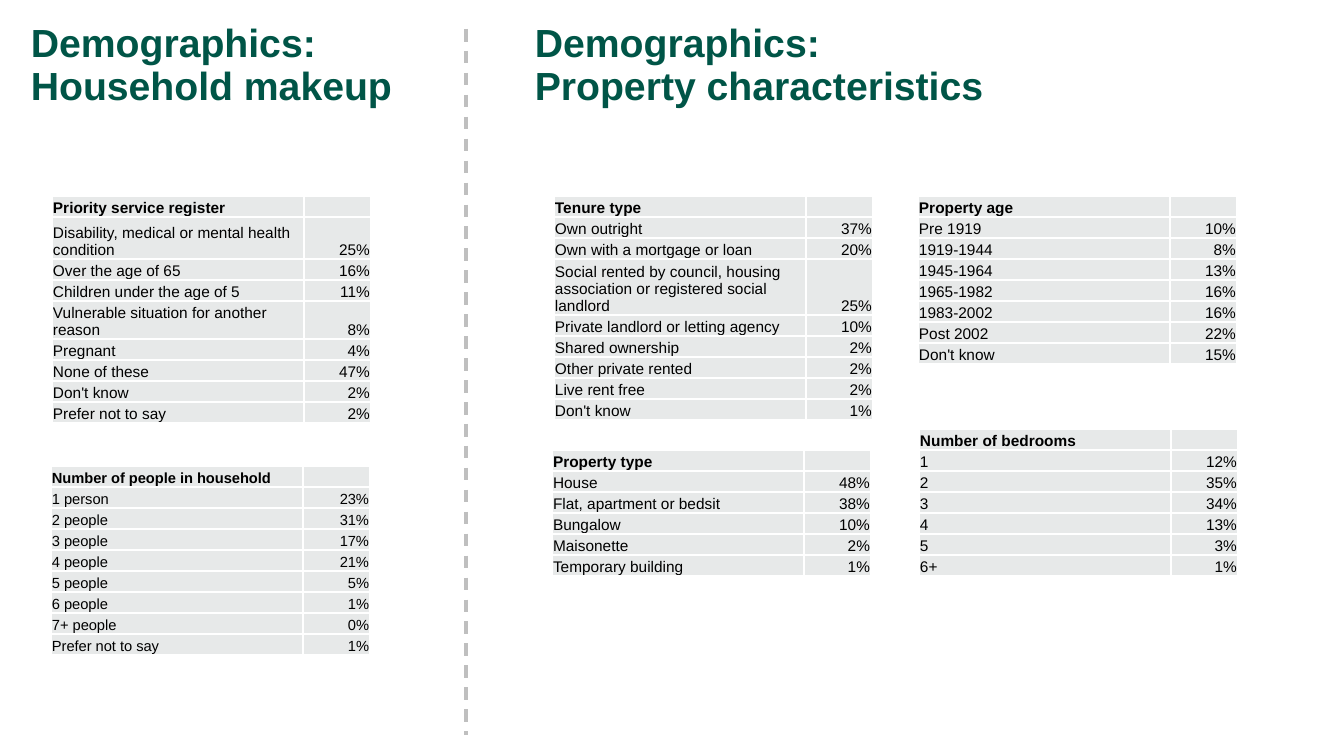
from lxml import etree
from pptx import Presentation
from pptx.dml.color import RGBColor
from pptx.enum.dml import MSO_LINE
from pptx.enum.shapes import MSO_CONNECTOR
from pptx.enum.text import MSO_ANCHOR, PP_ALIGN
from pptx.oxml import parse_xml
from pptx.oxml.ns import nsdecls, qn
from pptx.util import Emu, Pt

SLIDE_WIDTH, SLIDE_HEIGHT = 1344, 756
EMU_PER_PX = 914400 / 100.8

GREEN = RGBColor(0x00, 0x55, 0x47)
BLACK = RGBColor(0x00, 0x00, 0x00)
WHITE = RGBColor(0xFF, 0xFF, 0xFF)
CELL_GREY = RGBColor(0xE7, 0xE9, 0xE9)
DIVIDER_GREY = RGBColor(0xBF, 0xBF, 0xBF)

FONT = "Arial"
COLUMN_WIDTHS = (252, 67)
ROW_HEIGHT = 21

PRIORITY_SERVICE = [
    ("Priority service register", ""),
    ("Disability, medical or mental health condition", "25%"),
    ("Over the age of 65", "16%"),
    ("Children under the age of 5", "11%"),
    ("Vulnerable situation for another reason", "8%"),
    ("Pregnant", "4%"),
    ("None of these", "47%"),
    ("Don't know", "2%"),
    ("Prefer not to say", "2%"),
]
HOUSEHOLD_SIZE = [
    ("Number of people in household", ""),
    ("1 person", "23%"),
    ("2 people", "31%"),
    ("3 people", "17%"),
    ("4 people", "21%"),
    ("5 people", "5%"),
    ("6 people", "1%"),
    ("7+ people", "0%"),
    ("Prefer not to say", "1%"),
]
TENURE_TYPE = [
    ("Tenure type", ""),
    ("Own outright", "37%"),
    ("Own with a mortgage or loan", "20%"),
    ("Social rented by council, housing association or registered social landlord", "25%"),
    ("Private landlord or letting agency", "10%"),
    ("Shared ownership", "2%"),
    ("Other private rented", "2%"),
    ("Live rent free", "2%"),
    ("Don't know", "1%"),
]
PROPERTY_TYPE = [
    ("Property type", ""),
    ("House", "48%"),
    ("Flat, apartment or bedsit", "38%"),
    ("Bungalow", "10%"),
    ("Maisonette", "2%"),
    ("Temporary building", "1%"),
]
BEDROOMS = [
    ("Number of bedrooms", ""),
    ("1", "12%"),
    ("2", "35%"),
    ("3", "34%"),
    ("4", "13%"),
    ("5", "3%"),
    ("6+", "1%"),
]
PROPERTY_AGE = [
    ("Property age", ""),
    ("Pre 1919", "10%"),
    ("1919-1944", "8%"),
    ("1945-1964", "13%"),
    ("1965-1982", "16%"),
    ("1983-2002", "16%"),
    ("Post 2002", "22%"),
    ("Don't know", "15%"),
]


def px(length):
    return Emu(round(length * EMU_PER_PX))


def write(paragraph, text, size, color=BLACK, bold=False, align=PP_ALIGN.LEFT, spacing=None):
    paragraph.alignment = align
    if spacing:
        paragraph.line_spacing = spacing
    if not text:
        # An empty cell still takes its line height from the end mark.
        end_mark = etree.SubElement(paragraph._p, qn("a:endParaRPr"))
        end_mark.set("sz", str(int(size * 100)))
        return
    run = paragraph.add_run()
    run.text = text
    font = run.font
    font.name, font.size, font.bold = FONT, Pt(size), bold
    font.color.rgb = color


def add_heading(slide, lines, left, width):
    box = slide.shapes.add_textbox(px(left), px(19), px(width), px(61))
    frame = box.text_frame
    frame.word_wrap = True
    for index, line in enumerate(lines):
        paragraph = frame.add_paragraph() if index else frame.paragraphs[0]
        write(paragraph, line, 28, color=GREEN, bold=True, spacing=0.9)


def style_cell(cell):
    cell.margin_left = cell.margin_right = cell.margin_top = px(1)
    cell.margin_bottom = 0
    cell.vertical_anchor = MSO_ANCHOR.BOTTOM
    properties = cell._tc.get_or_add_tcPr()
    for side in ("lnL", "lnR", "lnT", "lnB"):
        properties.append(parse_xml(
            f'<a:{side} {nsdecls("a")} w="{Pt(1)}"><a:solidFill>'
            f'<a:srgbClr val="{WHITE}"/></a:solidFill></a:{side}>'))
    cell.fill.solid()
    cell.fill.fore_color.rgb = CELL_GREY


def add_share_table(slide, rows, left, top, size=11, tall_rows=None):
    """Add a label and percentage table; tall_rows maps a row index to its height."""
    heights = [(tall_rows or {}).get(index, ROW_HEIGHT) for index in range(len(rows))]
    table = slide.shapes.add_table(
        len(rows), len(COLUMN_WIDTHS), px(left), px(top),
        px(sum(COLUMN_WIDTHS)), px(sum(heights))).table
    table.first_row = table.horz_banding = False
    for column, width in zip(table.columns, COLUMN_WIDTHS):
        column.width = px(width)
    for row_index, (values, height) in enumerate(zip(rows, heights)):
        table.rows[row_index].height = px(height)
        for column_index, value in enumerate(values):
            cell = table.cell(row_index, column_index)
            style_cell(cell)
            align = PP_ALIGN.RIGHT if column_index else PP_ALIGN.LEFT
            write(cell.text_frame.paragraphs[0], value, size,
                  bold=row_index == 0, align=align)


def add_divider(slide, x, top, bottom):
    divider = slide.shapes.add_connector(
        MSO_CONNECTOR.STRAIGHT, px(x), px(top), px(x), px(bottom))
    divider.line.color.rgb = DIVIDER_GREY
    divider.line.width = Pt(2.25)
    divider.line.dash_style = MSO_LINE.DASH
    etree.SubElement(divider._element.spPr, qn("a:effectLst"))


def main():
    presentation = Presentation()
    presentation.slide_width, presentation.slide_height = px(SLIDE_WIDTH), px(SLIDE_HEIGHT)
    slide = presentation.slides.add_slide(presentation.slide_layouts[6])

    add_share_table(slide, PRIORITY_SERVICE, 52, 196, tall_rows={1: 42, 4: 38})
    add_share_table(slide, HOUSEHOLD_SIZE, 51, 466, size=10.5)
    add_share_table(slide, TENURE_TYPE, 554, 196, tall_rows={3: 56})
    add_share_table(slide, PROPERTY_TYPE, 552, 450)
    add_share_table(slide, BEDROOMS, 919, 429)
    add_share_table(slide, PROPERTY_AGE, 918, 196)

    add_heading(slide, ["Demographics: Household makeup"], 21, 482)
    add_heading(slide, ["Demographics:", "Property characteristics"], 525, 694)
    add_divider(slide, 466, 29, 735)

    presentation.save("out.pptx")


if __name__ == "__main__":
    main()
